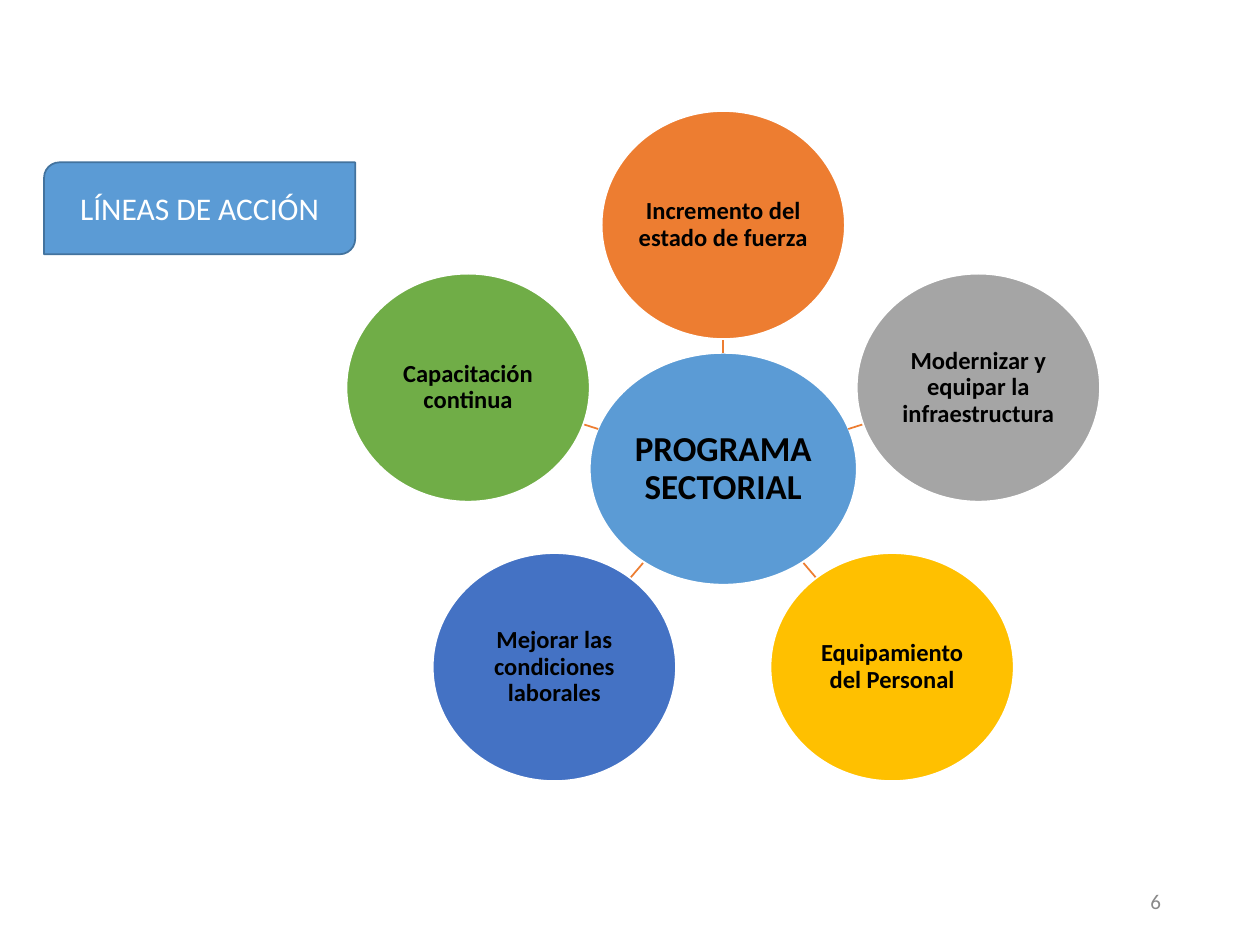
from lxml import etree
from pptx import Presentation
from pptx.dml.color import RGBColor
from pptx.enum.shapes import MSO_CONNECTOR, MSO_SHAPE
from pptx.enum.text import MSO_ANCHOR, PP_ALIGN
from pptx.oxml.ns import qn
from pptx.util import Pt

COLORS = {
    "blue": "5B9BD5",
    "blue_edge": "43739E",
    "orange": "ED7D31",
    "gray": "A5A5A5",
    "yellow": "FFC000",
    "indigo": "4472C4",
    "green": "70AD47",
    "white": "FFFFFF",
    "black": "000000",
    "number": "898989",
}
HUB_X, HUB_Y = 413.3, 267.9
HUB_SIZE = (152.6, 132.5)
ACTION_SIZE = (139, 130.3)
ACTIONS = [
    ("Incremento del estado de fuerza", "orange", 0, -139.3, 0.475, 0.54),
    ("Modernizar y equipar la infraestructura", "gray", 145.8, -46.4, 0.49, 0.555),
    ("Equipamiento del Personal", "yellow", 96.5, 113.3, 0.475, 0.55),
    ("Mejorar las condiciones laborales", "indigo", -96.5, 113.3, 0.475, 0.55),
    ("Capacitación continua", "green", -145.8, -46.4, 0.49, 0.545),
]


def rgb(name):
    return RGBColor.from_string(COLORS[name])


def write(frame, words, size, color, align=PP_ALIGN.CENTER, bold=False):
    frame.word_wrap = True
    frame.vertical_anchor = MSO_ANCHOR.MIDDLE
    paragraph = frame.paragraphs[0]
    paragraph.alignment = align
    run = paragraph.add_run()
    run.text = words
    run.font.name = "Calibri"
    run.font.size = Pt(size)
    run.font.bold = bold
    run.font.color.rgb = rgb(color)
    return paragraph


def add_filled(slide, kind, left, top, width, height, fill, edge):
    figure = slide.shapes.add_shape(kind, Pt(left), Pt(top), Pt(width), Pt(height))
    figure.shadow.inherit = False
    figure.fill.solid()
    figure.fill.fore_color.rgb = rgb(fill)
    figure.line.color.rgb = rgb(edge)
    figure.line.width = Pt(1)
    return figure


def add_circle(slide, x, y, extent, words, size, fill):
    width, height = extent
    circle = add_filled(slide, MSO_SHAPE.OVAL, x - width / 2, y - height / 2,
                        width, height, fill, "white")
    frame = circle.text_frame
    frame.margin_left = frame.margin_right = Pt(0.7)
    frame.margin_top = frame.margin_bottom = Pt(0.7)
    paragraph = write(frame, words, size, "black", bold=True)
    paragraph.line_spacing = 0.9
    paragraph.space_after = Pt(0.35 * size)


def add_spoke(slide, dx, dy, near, far):
    spoke = slide.shapes.add_connector(
        MSO_CONNECTOR.STRAIGHT,
        Pt(HUB_X + near * dx), Pt(HUB_Y + near * dy),
        Pt(HUB_X + far * dx), Pt(HUB_Y + far * dy))
    spoke.line.color.rgb = rgb("orange")
    spoke.line.width = Pt(1)
    etree.SubElement(spoke._element.spPr, qn("a:effectLst"))


def add_page_number(slide, number):
    page = slide.shapes.add_textbox(Pt(508.5), Pt(500.5), Pt(162), Pt(28.8))
    write(page.text_frame, number, 12, "number", PP_ALIGN.RIGHT)


def main():
    deck = Presentation()
    deck.slide_width, deck.slide_height = Pt(720), Pt(540)
    slide = deck.slides.add_slide(deck.slide_layouts[6])

    add_page_number(slide, "6")
    heading = add_filled(slide, MSO_SHAPE.ROUND_2_DIAG_RECTANGLE,
                         25.2, 92.8, 177.8, 52.5, "blue", "blue_edge")
    write(heading.text_frame, "LÍNEAS DE ACCIÓN", 18, "white")

    add_circle(slide, HUB_X, HUB_Y, HUB_SIZE, "PROGRAMA SECTORIAL", 20, "blue")
    for words, fill, dx, dy, near, far in ACTIONS:
        add_spoke(slide, dx, dy, near, far)
        add_circle(slide, HUB_X + dx, HUB_Y + dy, ACTION_SIZE, words, 14, fill)

    deck.save("out.pptx")


if __name__ == "__main__":
    main()
